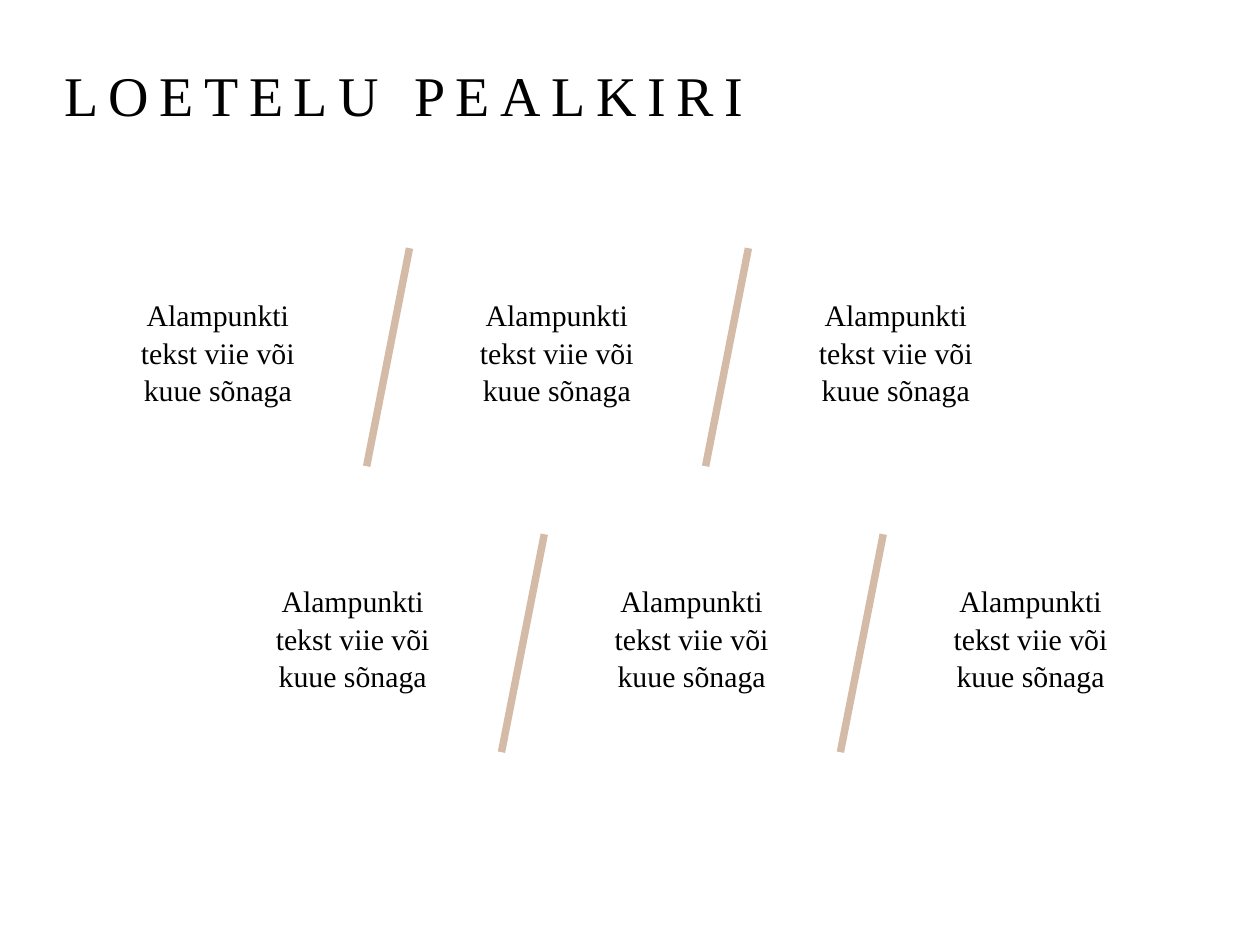
from lxml import etree
from pptx import Presentation
from pptx import util as u
from pptx.dml.color import RGBColor
from pptx.enum import shapes, text
from pptx.oxml.ns import qn

INK = {"text": "000000", "slash": "D3BBA8"}
FONT = "Times New Roman"
POINT = ["Alampunkti", "tekst viie või", "kuue sõnaga"]


class Deck:
    """Slide style: a grid whose lower row is pushed to the right."""
    col, row, skew = 2.69, 2.27, 1.07

    def __init__(self):
        self.prs = Presentation()
        self.prs.slide_width = u.Inches(10)
        self.prs.slide_height = u.Inches(7.5)
        self.page = self.prs.slides.add_slide(self.prs.slide_layouts[6])

    def spot(self, col, row, left, top):
        """Place of a grid cell, given the place of the first cell."""
        return left + col * self.col + row * self.skew, top + row * self.row

    def label(self, lines, left, top, wide, high, size, anchor, align, space=1.0):
        box = self.page.shapes.add_textbox(*map(u.Inches, (left, top, wide, high)))
        frame = box.text_frame
        frame.word_wrap = True
        frame.vertical_anchor = anchor
        frame.text = "\n".join(lines)
        for para in frame.paragraphs:
            para.alignment = align
            para.line_spacing = space
            para.font.size = u.Pt(size)
            para.font.name = FONT
            para.font.color.rgb = RGBColor.from_string(INK["text"])
        return frame

    def title(self, words):
        frame = self.label([words], 0.41, -0.18, 9.15, 1.24, 32,
                           text.MSO_ANCHOR.BOTTOM, text.PP_ALIGN.LEFT)
        # Letter spacing of 6 points
        for run in frame.paragraphs[0].runs:
            run._r.get_or_add_rPr().set("spc", "600")

    def point(self, lines, col, row):
        left, top = self.spot(col, row, 0.91, 2.31)
        self.label(lines, left, top, 1.64, 0.96, 17,
                   text.MSO_ANCHOR.MIDDLE, text.PP_ALIGN.CENTER, 1.05)

    def slash(self, col, row):
        left, top = self.spot(col, row, 3.25, 1.97)
        ends = (left, top, left - 0.34, top + 1.73)
        line = self.page.shapes.add_connector(
            shapes.MSO_CONNECTOR.STRAIGHT, *map(u.Inches, ends))
        line.line.width = u.Pt(4.25)
        line.line.color.rgb = RGBColor.from_string(INK["slash"])
        etree.SubElement(line._element.spPr, qn("a:effectLst"))


def main():
    deck = Deck()
    deck.title("LOETELU PEALKIRI")

    # Two rows of three points, with slashes between them
    for row in range(2):
        for col in range(3):
            deck.point(POINT, col, row)
            if col < 2:
                deck.slash(col, row)

    deck.prs.save("out.pptx")


if __name__ == "__main__":
    main()
